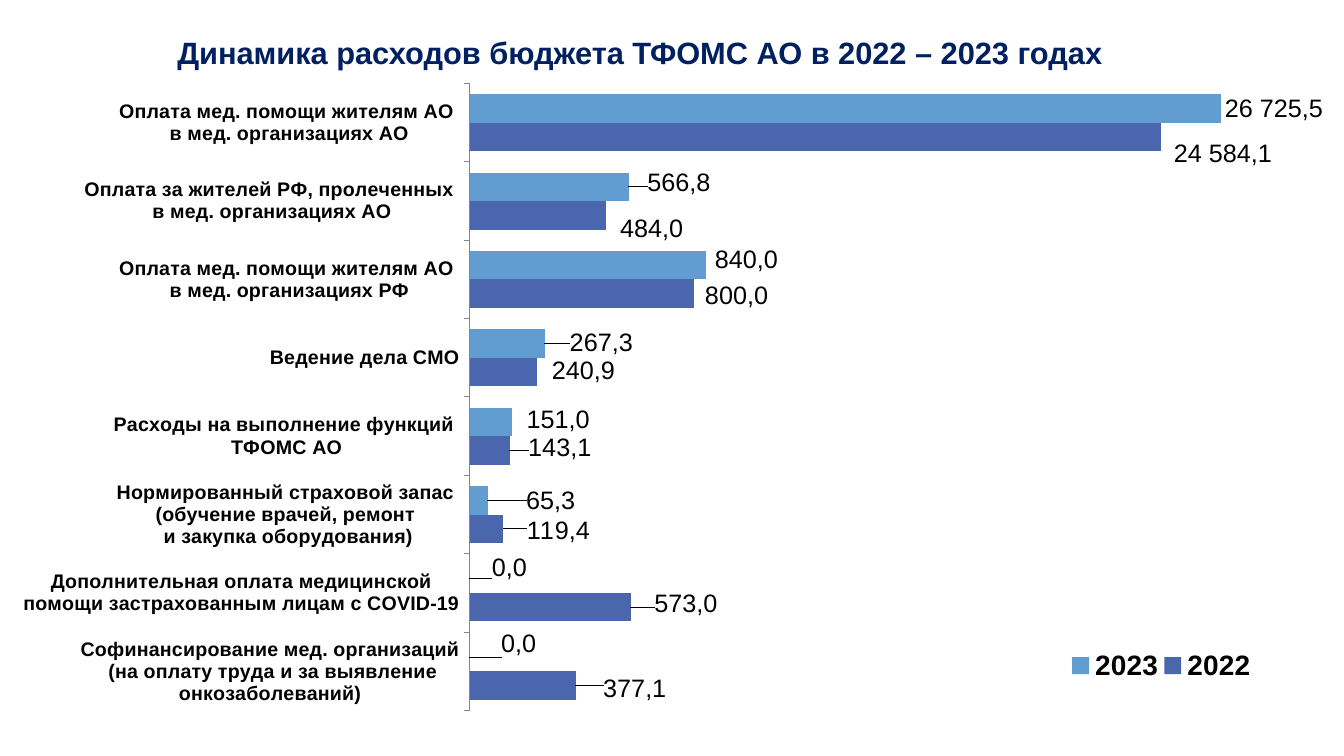
from dataclasses import dataclass

from lxml import etree
from pptx import Presentation
from pptx import util as u
from pptx.chart.data import CategoryChartData
from pptx.dml.color import RGBColor
from pptx.enum import chart as ch, text
from pptx.oxml import parse_xml
from pptx.oxml.ns import nsdecls, qn

WIDE, HIGH = u.Inches(13.33), u.Inches(7.5)
FONT = "Arial"
C15 = "http://schemas.microsoft.com/office/drawing/2012/chart"


@dataclass
class Box:
    """Left, top, width and height in percent of the slide."""
    x: float
    y: float
    w: float
    h: float

    def emu(self) -> tuple:
        return (int(WIDE * self.x / 100), int(HIGH * self.y / 100),
                int(WIDE * self.w / 100), int(HIGH * self.h / 100))


@dataclass
class Year:
    """One series; shifts move its labels, in percent of the chart."""
    name: str
    hue: str
    sums: list
    tags: list
    shifts: list


CATS = [
    "Софинансирование мед. организаций\n (на оплату труда и за выявление онкозаболеваний)",
    "Дополнительная оплата медицинской помощи застрахованным лицам с COVID-19",
    "Нормированный страховой запас \n(обучение врачей, ремонт \nи закупка оборудования)",
    "Расходы на выполнение функций \nТФОМС АО",
    "Ведение дела СМО",
    "Оплата мед. помощи жителям АО \nв мед. организациях РФ",
    "Оплата за жителей РФ, пролеченных \nв мед. организациях АО",
    "Оплата мед. помощи жителям АО \nв мед. организациях АО",
]
YEARS = [
    Year("2022", "4A66AC",
         [3771, 5730, 1194, 1431, 2409, 8000, 4840, 24584],
         ["377,1", "573,0", "119,4", "143,1", "240,9", "800,0", "484,0", "24 584,1"],
         [(1.8, 0.5), (1.5, -0.5), (1.5, 0.3), (1.1, -0.5),
          (0.8, -0.3), (0.5, 0.3), (0.8, 2.1), (0.7, 2.5)]),
    Year("2023", "629DD1",
         [0, 0, 653, 1510, 2673, 8400, 5668, 26726],
         ["0,0", "0,0", "65,3", "151,0", "267,3", "840,0", "566,8", "26 725,5"],
         [(2.1, -2), (1.4, -1.7), (2.6, 0), (0.8, -0.3),
          (1.6, -0.2), (0.4, -0.8), (1.1, -0.6), (0, 0)]),
]


def paint(part, hue: str) -> None:
    """Give a fill or a font a solid colour."""
    if hasattr(part, "solid"):
        part.solid()
        part = part.fore_color
    else:
        part = part.color
    part.rgb = RGBColor.from_string(hue)


def style(font, size: float, hue: str = "000000", bold: bool = False) -> None:
    font.name, font.size, font.bold = FONT, u.Pt(size), bold
    paint(font, hue)


def write(frame, words: str, *, size: float, hue: str = "000000",
          bold: bool = False, align=None) -> None:
    para = frame.paragraphs[0]
    para.alignment = align
    run = para.add_run()
    run.text = words
    style(run.font, size, hue, bold)


def layout(x: float, y: float, w: float = 0, h: float = 0, *,
           inner: bool = False, edge: bool = False):
    """Manual chart layout, in percent of the chart."""
    node = parse_xml(f"<c:layout {nsdecls('c')}><c:manualLayout/></c:layout>")
    items = [("layoutTarget", "inner")] if inner else []
    if edge:
        items += [("xMode", "edge"), ("yMode", "edge")]
    items += [("x", x / 100), ("y", y / 100)]
    if w:
        items += [("w", w / 100), ("h", h / 100)]
    for tag, val in items:
        etree.SubElement(node[0], qn(f"c:{tag}")).set("val", str(val))
    return node


def place(parent, node, after: str = "") -> None:
    """Put a layout first in its parent, or after the named child."""
    for old in parent.findall(qn("c:layout")):
        parent.remove(old)
    if after:
        parent.find(qn(after)).addnext(node)
    else:
        parent.insert(0, node)


def draw_year(series, year: Year) -> None:
    paint(series.format.fill, year.hue)
    series.invert_if_negative = False
    labels = series.data_labels
    labels.show_value = True
    style(labels.font, 18, bold=True)
    for i, tag in enumerate(year.tags):
        label = series.points[i].data_label
        write(label.text_frame, tag, size=18)
        label.position = ch.XL_LABEL_POSITION.OUTSIDE_END
    group = labels._element
    for node, shift in zip(group.iter(qn("c:dLbl")), year.shifts):
        place(node, layout(*shift), "c:idx")
    # No leader lines from bars to labels
    group.append(parse_xml(
        f'<c:extLst {nsdecls("c")}>'
        f'<c:ext uri="{{CE6537A1-D6FC-4f65-9D91-7224C49458BB}}" xmlns:c15="{C15}">'
        '<c15:showLeaderLines val="0"/></c:ext></c:extLst>'))


def draw_chart(slide, box: Box) -> None:
    data = CategoryChartData(number_format="0")
    data.categories = CATS
    for year in YEARS:
        data.add_series(year.name, year.sums)
    chart = slide.shapes.add_chart(
        ch.XL_CHART_TYPE.BAR_CLUSTERED, *box.emu(), data).chart
    chart.has_title = False
    style(chart.font, 18)

    # Bars and their labels
    plot = chart.plots[0]
    plot.gap_width, plot.overlap, plot.vary_by_categories = 75, 0, False
    for series, year in zip(plot.series, YEARS):
        draw_year(series, year)
    area = chart._chartSpace.chart.plotArea
    place(area, layout(34.55, 2.3, 64.25, 96.3, inner=True, edge=True))

    # Axes
    cat, val = chart.category_axis, chart.value_axis
    style(cat.tick_labels.font, 14, bold=True)
    cat.major_tick_mark = ch.XL_TICK_MARK.OUTSIDE
    paint(cat.format.line.fill, "868686")
    cat.format.line.width = u.Pt(0.75)
    val.minimum_scale, val.maximum_scale = 0, 30000
    val.has_major_gridlines = True
    grid = val.major_gridlines.format.line
    paint(grid.fill, "FFFFFF")
    grid.width = u.Pt(0.75)
    val.visible = False

    # Legend
    chart.has_legend = True
    key = chart.legend
    key.position = ch.XL_LEGEND_POSITION.BOTTOM
    key.include_in_layout = False
    style(key.font, 20, bold=True)
    place(key._element, layout(80, 88.2, 14.5, 7, edge=True), "c:legendPos")


def draw_title(slide, box: Box) -> None:
    frame = slide.shapes.add_textbox(*box.emu()).text_frame
    frame.word_wrap = True
    frame.auto_size = text.MSO_AUTO_SIZE.SHAPE_TO_FIT_TEXT
    write(frame, "Динамика расходов бюджета ТФОМС АО в 2022 – 2023 годах ",
          size=22, hue="002060", bold=True, align=text.PP_ALIGN.CENTER)


def main() -> None:
    deck = Presentation()
    deck.slide_width, deck.slide_height = WIDE, HIGH
    slide = deck.slides.add_slide(deck.slide_layouts[6])
    draw_chart(slide, Box(1.2, 9.07, 97.67, 86.13))
    draw_title(slide, Box(5.7, 3.87, 84.47, 6.27))
    deck.save("out.pptx")


if __name__ == "__main__":
    main()
